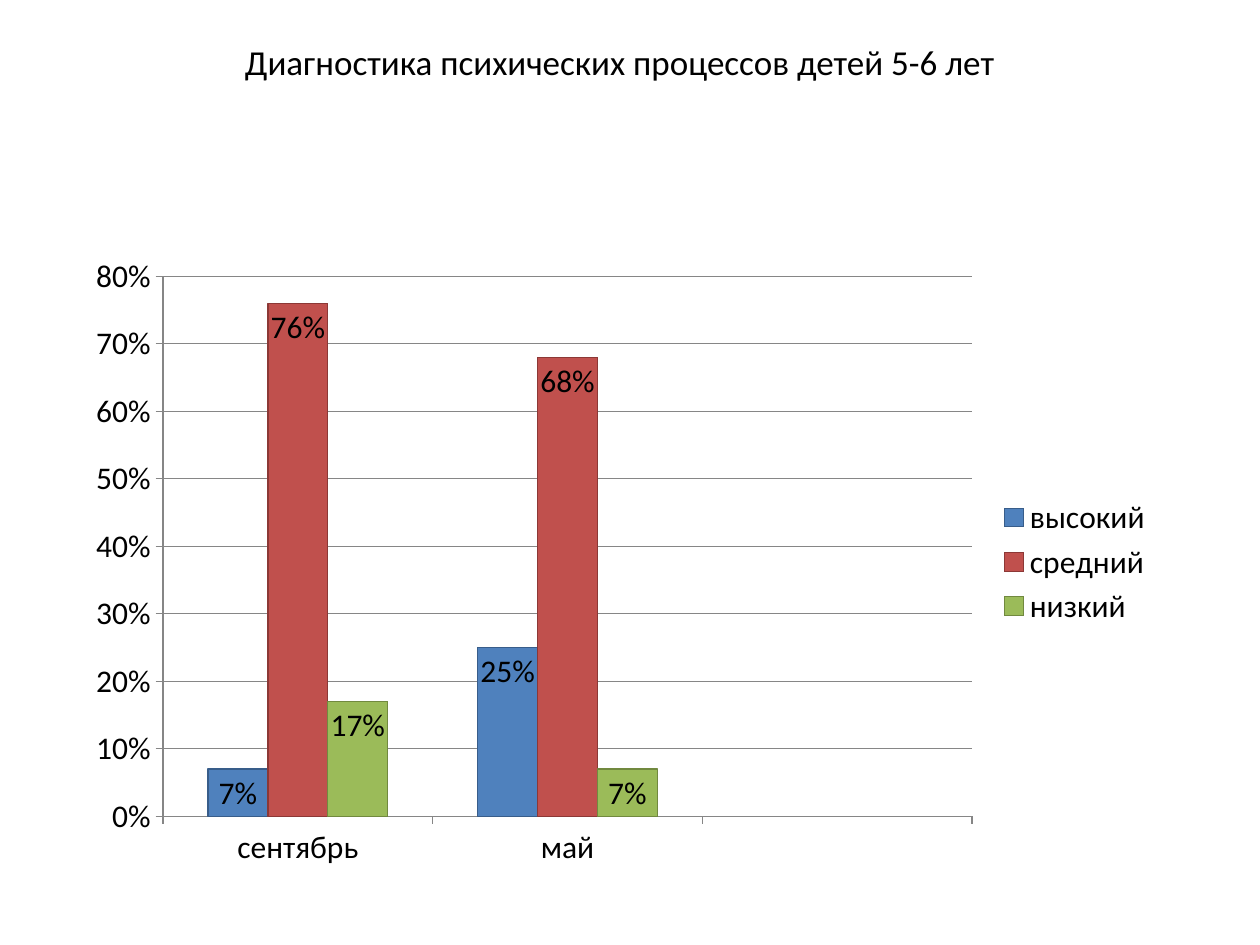
from pptx import Presentation
from pptx.chart.data import CategoryChartData
from pptx.dml.color import RGBColor
from pptx.enum.chart import (XL_CHART_TYPE, XL_LABEL_POSITION as LabelPosition,
                             XL_LEGEND_POSITION as LegendPosition, XL_TICK_MARK as TickMark)
from pptx.enum.text import MSO_ANCHOR, PP_ALIGN
from pptx.util import Inches, Pt

BLACK = RGBColor(0x00, 0x00, 0x00)
GRID_GRAY = RGBColor(0x86, 0x86, 0x86)
FONT = "Calibri"
PERCENT = "0%"

# The last category is an empty slot on the axis.
MONTHS = ("сентябрь", "май", "")
# level, values, fill, outline
LEVELS = (
    ("высокий", (0.07, 0.25, None), RGBColor(0x4F, 0x81, 0xBD), RGBColor(0x38, 0x5D, 0x8A)),
    ("средний", (0.76, 0.68, None), RGBColor(0xC0, 0x50, 0x4D), RGBColor(0x8C, 0x38, 0x36)),
    ("низкий", (0.17, 0.07, None), RGBColor(0x9B, 0xBB, 0x59), RGBColor(0x71, 0x89, 0x3F)),
)


def set_format(target, formats):
    for name, value in formats.items():
        setattr(target, name, value)


def set_font(font, size):
    set_format(font, {"name": FONT, "size": Pt(size), "bold": False})
    font.color.rgb = BLACK


def set_line(line, color):
    line.color.rgb = color
    line.width = Pt(0.75)


def place_title(page, box, text):
    title = page.shapes.title
    set_format(title, dict(zip(("left", "top", "width", "height"), box)))
    frame = title.text_frame
    set_format(frame, {"word_wrap": True, "vertical_anchor": MSO_ANCHOR.MIDDLE})
    para = frame.paragraphs[0]
    para.alignment = PP_ALIGN.CENTER
    span = para.add_run()
    span.text = text
    set_font(span.font, 20)


def style_axes(chart):
    for axis in (chart.category_axis, chart.value_axis):
        set_format(axis, {"major_tick_mark": TickMark.OUTSIDE,
                          "minor_tick_mark": TickMark.NONE})
        set_line(axis.format.line, GRID_GRAY)
    values = chart.value_axis
    set_format(values, {"minimum_scale": 0, "maximum_scale": 0.8, "major_unit": 0.1,
                        "has_major_gridlines": True})
    set_line(values.major_gridlines.format.line, GRID_GRAY)
    set_format(values.tick_labels, {"number_format": PERCENT,
                                    "number_format_is_linked": False})


def style_series(series, fill, outline):
    series.invert_if_negative = False
    series.format.fill.solid()
    series.format.fill.fore_color.rgb = fill
    set_line(series.format.line, outline)
    labels = series.data_labels
    set_format(labels, {"show_value": True, "position": LabelPosition.INSIDE_END,
                        "number_format": PERCENT, "number_format_is_linked": False})
    set_font(labels.font, 18)


def place_level_chart(page, box):
    data = CategoryChartData(number_format=PERCENT)
    data.categories = MONTHS
    for name, values, _, _ in LEVELS:
        data.add_series(name, values)
    chart = page.shapes.add_chart(XL_CHART_TYPE.COLUMN_CLUSTERED, *box, data).chart
    set_format(chart, {"has_title": False, "has_legend": True})
    set_font(chart.font, 18)
    set_format(chart.legend, {"position": LegendPosition.RIGHT, "include_in_layout": False})
    style_axes(chart)
    plot = chart.plots[0]
    set_format(plot, {"gap_width": 150, "overlap": 0, "vary_by_categories": False})
    for series, (_, _, fill, outline) in zip(plot.series, LEVELS):
        style_series(series, fill, outline)


def main():
    deck = Presentation()
    set_format(deck, {"slide_width": Inches(10), "slide_height": Inches(7.5)})
    page = deck.slides.add_slide(deck.slide_layouts.get_by_name("Title Only"))
    place_title(page, [Inches(n) for n in (0.67, 0.13, 8.5, 0.71)],
                "Диагностика психических процессов детей 5-6 лет")
    place_level_chart(page, [Inches(n) for n in (0.59, 1.94, 8.66, 5.04)])
    deck.save("out.pptx")


if __name__ == "__main__":
    main()
